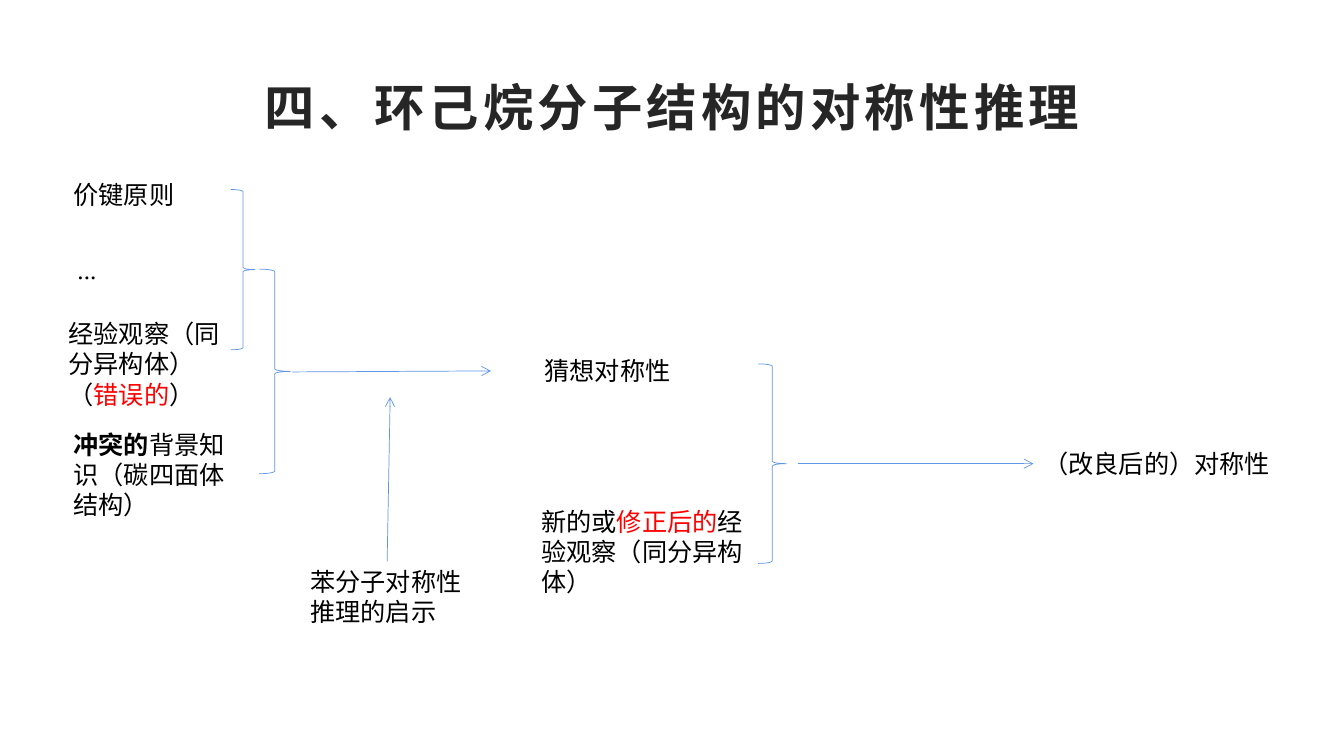
"""Build a slide on the symmetry reasoning behind the structure of cyclohexane."""
from dataclasses import dataclass

from lxml import etree
from pptx import Presentation
from pptx.dml.color import RGBColor
from pptx.enum.shapes import MSO_CONNECTOR, MSO_SHAPE
from pptx.enum.text import MSO_ANCHOR, MSO_AUTO_SIZE, PP_ALIGN
from pptx.oxml.ns import qn
from pptx.util import Emu, Pt

STRAIGHT = MSO_CONNECTOR.STRAIGHT
RIGHT_BRACE = MSO_SHAPE.RIGHT_BRACE
MIDDLE = MSO_ANCHOR.MIDDLE
NO_FIT, GROW = MSO_AUTO_SIZE.NONE, MSO_AUTO_SIZE.SHAPE_TO_FIT_TEXT
LEFT, CENTER = PP_ALIGN.LEFT, PP_ALIGN.CENTER
TOP_SITE, LEFT_SITE = 0, 1
EMU_PER_PX = 9144
TITLE_ONLY = 5


@dataclass(frozen=True)
class Theme:
    title_font: str = "Arial"
    body_font: str = "Times New Roman"
    title_size: int = 36
    body_size: int = 18
    title_spacing: int = 300
    line_width: float = 0.5
    title_color: str = "262626"
    text_color: str = "000000"
    accent_color: str = "FF0000"
    line_color: str = "6096E6"


@dataclass(frozen=True)
class Box:
    left: int
    top: int
    width: int
    height: int


@dataclass(frozen=True)
class Span:
    text: str
    color: str
    bold: bool = False


@dataclass(frozen=True)
class Label:
    key: str
    box: Box
    spans: tuple[Span, ...]
    align: PP_ALIGN = LEFT


@dataclass(frozen=True)
class Arrow:
    start: tuple[int, int]
    end: tuple[int, int]
    source: str = ""
    target: str = ""


THEME = Theme()
TITLE_BOX = Box(67, 67, 1200, 77)


def plain(text: str) -> Span:
    """Return a span in the ordinary text colour."""
    return Span(text, THEME.text_color)


def accent(text: str) -> Span:
    """Return a span in the accent colour."""
    return Span(text, THEME.accent_color)


LABELS = (
    Label("observation", Box(58, 311, 172, 101),
          (plain("经验观察（同分异构体）（"), accent("错误的"), plain("）"))),
    Label("conjecture", Box(490, 348, 225, 40), (plain("猜想对称性"),), CENTER),
    Label("new observation", Box(527, 497, 225, 101),
          (plain("新的或"), accent("修正后的"), plain("经验观察（同分异构体）"))),
    Label("improved symmetry", Box(1025, 440, 250, 40), (plain("（改良后的）对称性"),)),
    Label("valence rule", Box(63, 173, 172, 40), (plain("价键原则"),)),
    Label("benzene hint", Box(298, 557, 172, 71), (plain("苯分子对称性推理的启示"),)),
    Label("further premises", Box(67, 247, 172, 40), (plain("..."),)),
    Label("conflicting knowledge", Box(63, 421, 172, 101),
          (Span("冲突的", THEME.text_color, True), plain("背景知识（碳四面体结构）"))),
)
BRACES = (
    Box(229, 188, 24, 159),
    Box(257, 267, 31, 203),
    Box(752, 361, 28, 198),
)
ARROWS = (
    Arrow((290, 369), (487, 368)),
    Arrow((791, 460), (1025, 460), target="improved symmetry"),
    Arrow((384, 557), (387, 394), source="benzene hint"),
)


def px(length: int) -> Emu:
    """Convert px to EMU."""
    return Emu(length * EMU_PER_PX)


def frame(box: Box) -> tuple[Emu, Emu, Emu, Emu]:
    """Return the EMU position and size of a box."""
    return px(box.left), px(box.top), px(box.width), px(box.height)


def format_run(run, font: str, size: int, color: str, bold: bool) -> None:
    """Apply font, size, colour and weight to a run."""
    run.font.name = font
    run.font.size = Pt(size)
    run.font.bold = bold
    run.font.color.rgb = RGBColor.from_string(color)


def format_line(line) -> None:
    """Apply the diagram's line style."""
    line.color.rgb = RGBColor.from_string(THEME.line_color)
    line.width = Pt(THEME.line_width)


def draw_title(page, text: str) -> None:
    """Fill and format the title placeholder."""
    title = page.shapes.title
    title.left, title.top, title.width, title.height = frame(TITLE_BOX)
    title.text_frame.text = text
    title.text_frame.auto_size = NO_FIT
    title.text_frame.vertical_anchor = MIDDLE
    para = title.text_frame.paragraphs[0]
    para.alignment = CENTER
    run = para.runs[0]
    format_run(run, THEME.title_font, THEME.title_size, THEME.title_color, True)
    run.font._element.set("spc", str(THEME.title_spacing))


def draw_label(page, label: Label):
    """Draw a text label and return its shape."""
    shape = page.shapes.add_textbox(*frame(label.box))
    shape.text_frame.word_wrap = True
    shape.text_frame.auto_size = GROW
    para = shape.text_frame.paragraphs[0]
    para.alignment = label.align
    for span in label.spans:
        run = para.add_run()
        run.text = span.text
        format_run(run, THEME.body_font, THEME.body_size, span.color, span.bold)
    return shape


def draw_brace(page, box: Box) -> None:
    """Draw an unfilled right brace."""
    brace = page.shapes.add_shape(RIGHT_BRACE, *frame(box))
    brace.shadow.inherit = False
    brace.fill.background()
    format_line(brace.line)


def draw_arrow(page, arrow: Arrow, labels: dict) -> None:
    """Draw an arrow and join it to its labels."""
    connector = page.shapes.add_connector(
        STRAIGHT, *map(px, arrow.start), *map(px, arrow.end))
    if arrow.source:
        connector.begin_connect(labels[arrow.source], TOP_SITE)
    if arrow.target:
        connector.end_connect(labels[arrow.target], LEFT_SITE)
    format_line(connector.line)
    etree.SubElement(connector.line._get_or_add_ln(), qn("a:tailEnd"), type="arrow")
    etree.SubElement(connector._element.spPr, qn("a:effectLst"))


def main() -> None:
    """Build and save the deck."""
    deck = Presentation()
    deck.slide_width, deck.slide_height = px(1333), px(750)
    page = deck.slides.add_slide(deck.slide_layouts[TITLE_ONLY])
    draw_title(page, "四、环己烷分子结构的对称性推理")
    labels = {label.key: draw_label(page, label) for label in LABELS}
    for box in BRACES:
        draw_brace(page, box)
    for arrow in ARROWS:
        draw_arrow(page, arrow, labels)
    deck.save("out.pptx")


if __name__ == "__main__":
    main()
